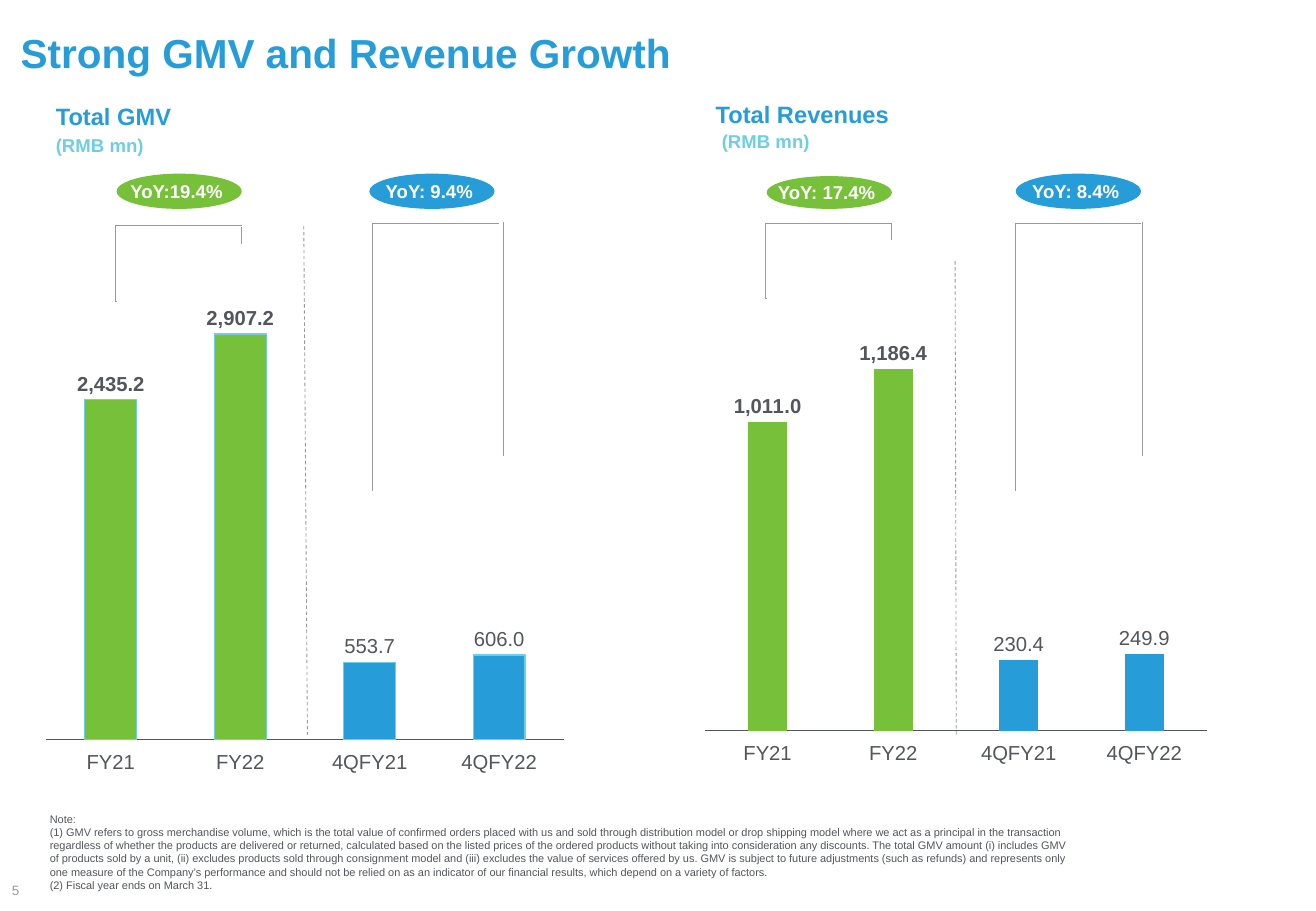
from dataclasses import dataclass

from lxml.etree import SubElement
from pptx import Presentation
from pptx.chart.data import CategoryChartData
from pptx.dml.color import RGBColor
from pptx.enum.chart import XL_CHART_TYPE, XL_LABEL_POSITION, XL_TICK_LABEL_POSITION, XL_TICK_MARK
from pptx.enum.dml import MSO_LINE
from pptx.enum.shapes import MSO_CONNECTOR, MSO_SHAPE
from pptx.enum.text import MSO_ANCHOR, MSO_AUTO_SIZE, PP_ALIGN
from pptx.oxml.ns import qn
from pptx.slide import Slide
from pptx.text.text import TextFrame
from pptx.util import Emu, Pt

PX = 9144  # 100 px to the inch
FONT = "Arial"
COLORS = {
    "blue": "269DD8",
    "green": "76C03A",
    "sky": "6DCEE5",
    "text": "53565A",
    "rule": "97999B",
    "page": "999A9B",
    "white": "FFFFFF",
}
PERIODS = ("FY21", "FY22", "4QFY21", "4QFY22")
NUMBER_FORMAT = "#,##0.0"
NOTES = (
    "Note:",
    "(1) GMV refers to gross merchandise volume, which is the total value of confirmed orders placed "
    "with us and sold through distribution model or drop shipping model where we act as a principal in "
    "the transaction regardless of whether the products are delivered or returned, calculated based on "
    "the listed prices of the ordered products without taking into consideration any discounts. The total "
    "GMV amount (i) includes GMV of products sold by a unit, (ii) excludes products sold through "
    "consignment model and (iii) excludes the value of services offered by us. GMV is subject to future "
    "adjustments (such as refunds) and represents only one measure of the Company’s performance and "
    "should not be relied on as an indicator of our financial results, which depend on a variety of factors.",
    "(2) Fiscal year ends on March 31.",
)


@dataclass(frozen=True)
class Box:
    left: int
    top: int
    width: int
    height: int

    def emu(self) -> tuple[Emu, ...]:
        return tuple(Emu(n * PX) for n in (self.left, self.top, self.width, self.height))


@dataclass(frozen=True)
class Growth:
    """A YoY badge above a bracket that joins two bars."""
    label: str
    color: str
    badge: Box
    start: tuple[int, int]
    corner: tuple[int, int]
    drop: tuple[int, int, int]  # x, top and bottom of the right leg


@dataclass(frozen=True)
class Metric:
    heading: str
    heading_box: Box
    unit_box: Box
    chart_box: Box
    plot: tuple[float, float, float, float]
    values: tuple[float, ...]
    axis_max: int
    gap: int
    overlap: int
    outline: str | None
    divider: tuple[int, int, int, int]
    growths: tuple[Growth, Growth]


METRICS = (
    Metric("Total Revenues", Box(589, 82, 144, 24), Box(594, 107, 73, 19), Box(565, 165, 444, 474),
           (0.034, 0.179, 0.931, 0.742), (1011, 1186.4, 230.4, 249.9), 1400, 219, -27, None,
           (786, 215, 787, 605),
           (Growth("YoY: 17.4% ", "green", Box(631, 145, 103, 27), (631, 246), (734, 184), (734, 184, 198)),
            Growth("YoY: 8.4% ", "blue", Box(836, 143, 103, 29), (836, 404), (939, 184), (940, 183, 375)))),
    Metric("Total GMV", Box(46, 84, 97, 24), Box(46, 110, 73, 19), Box(29, 198, 444, 442),
           (0.02, 0.02, 0.96, 0.91), (2435.2, 2907.2, 553.7, 606), 3500, 150, -25, "sky",
           (250, 186, 253, 605),
           (Growth("YoY:19.4% ", "green", Box(96, 143, 103, 29), (96, 248), (199, 186), (199, 187, 201)),
            Growth("YoY: 9.4% ", "blue", Box(304, 143, 103, 29), (307, 404), (411, 184), (414, 183, 375)))),
)


def rgb(name: str) -> RGBColor:
    return RGBColor.from_string(COLORS[name])


def style_font(font, size: float, color: str, bold: bool = False) -> None:
    font.name, font.size, font.bold = FONT, Pt(size), bold
    font.color.rgb = rgb(color)


def write(frame: TextFrame, *lines: str, size: float, color: str, bold: bool = False,
          align=PP_ALIGN.LEFT, anchor=MSO_ANCHOR.TOP, wrap: bool = True, inset: bool = False) -> None:
    frame.auto_size = MSO_AUTO_SIZE.NONE
    frame.word_wrap = wrap
    frame.vertical_anchor = anchor
    if not inset:
        frame.margin_left = frame.margin_top = frame.margin_right = frame.margin_bottom = 0
    for index, line in enumerate(lines):
        paragraph = frame.paragraphs[0] if index == 0 else frame.add_paragraph()
        paragraph.alignment = align
        run = paragraph.add_run()
        run.text = line
        style_font(run.font, size, color, bold)


def add_text(slide: Slide, box: Box, *lines: str, **text_format) -> None:
    write(slide.shapes.add_textbox(*box.emu()).text_frame, *lines, **text_format)


def add_rule(slide: Slide, *ends: int, dashed: bool = False, elbow: bool = False) -> None:
    kind = MSO_CONNECTOR.ELBOW if elbow else MSO_CONNECTOR.STRAIGHT
    rule = slide.shapes.add_connector(kind, *(Emu(n * PX) for n in ends))
    rule.line.color.rgb = rgb("rule")
    rule.line.width = Pt(0.5)
    if dashed:
        rule.line.dash_style = MSO_LINE.DASH
    properties = rule._element.spPr
    SubElement(properties, qn("a:effectLst"))
    if elbow:  # turn at the very start, so the line rises before it runs right
        geometry = properties.find(qn("a:prstGeom"))
        adjustments = geometry.find(qn("a:avLst"))
        SubElement(adjustments, qn("a:gd"), name="adj1", fmla="val -700")


def set_plot_area(chart, plot: tuple[float, float, float, float]) -> None:
    area = chart._chartSpace.chart.plotArea
    layout = area.find(qn("c:layout"))
    if layout is None:
        layout = area.makeelement(qn("c:layout"), {})
        area.insert(0, layout)
    manual = SubElement(layout, qn("c:manualLayout"))
    settings = [("layoutTarget", "inner"), ("xMode", "edge"), ("yMode", "edge")]
    settings += zip("xywh", map(str, plot))
    for tag, value in settings:
        SubElement(manual, qn(f"c:{tag}"), val=value)


def style_labels(labels, bold: bool) -> None:
    style_font(labels.font, 12, "text", bold)
    labels.position = XL_LABEL_POSITION.OUTSIDE_END


def add_metric_chart(slide: Slide, metric: Metric) -> None:
    data = CategoryChartData(number_format=NUMBER_FORMAT)
    data.categories = PERIODS
    data.add_series("Series 1", metric.values)
    chart = slide.shapes.add_chart(XL_CHART_TYPE.COLUMN_CLUSTERED, *metric.chart_box.emu(), data).chart
    chart.has_legend = chart.has_title = False
    style_font(chart.font, 10, "text")
    set_plot_area(chart, metric.plot)

    value_axis = chart.value_axis
    value_axis.visible = value_axis.has_major_gridlines = False
    value_axis.minimum_scale, value_axis.maximum_scale = 0, metric.axis_max
    period_axis = chart.category_axis
    period_axis.major_tick_mark = XL_TICK_MARK.NONE
    period_axis.tick_label_position = XL_TICK_LABEL_POSITION.LOW
    style_font(period_axis.tick_labels.font, 12, "text")
    period_axis.format.line.color.rgb = rgb("text")
    period_axis.format.line.width = Pt(0.75)

    bars = chart.plots[0]
    bars.vary_by_categories = False
    bars.gap_width, bars.overlap = metric.gap, metric.overlap
    series = bars.series[0]
    labels = series.data_labels
    labels.show_value = True
    labels.number_format, labels.number_format_is_linked = NUMBER_FORMAT, False
    style_labels(labels, bold=False)
    for index in range(len(PERIODS)):
        full_year = index < 2
        point = series.points[index]
        point.format.fill.solid()
        point.format.fill.fore_color.rgb = rgb("green" if full_year else "blue")
        if metric.outline:
            point.format.line.color.rgb = rgb(metric.outline)
            point.format.line.width = Pt(0.75)
        if full_year:
            style_labels(point.data_label, bold=True)


def add_growth(slide: Slide, growth: Growth) -> None:
    badge = slide.shapes.add_shape(MSO_SHAPE.OVAL, *growth.badge.emu())
    badge.shadow.inherit = False
    badge.fill.solid()
    badge.fill.fore_color.rgb = rgb(growth.color)
    badge.line.fill.background()
    write(badge.text_frame, growth.label, size=11, color="white", bold=True, align=PP_ALIGN.CENTER,
          anchor=MSO_ANCHOR.MIDDLE, wrap=False, inset=True)
    add_rule(slide, *growth.start, *growth.corner, elbow=True)
    x, top, bottom = growth.drop
    add_rule(slide, x, top, x, bottom)


def main() -> None:
    deck = Presentation()
    deck.slide_width, deck.slide_height = Emu(1083 * PX), Emu(750 * PX)
    slide = deck.slides.add_slide(deck.slide_layouts[5])
    title = slide.shapes.title
    title.left, title.top, title.width, title.height = Box(17, 22, 1050, 41).emu()
    write(title.text_frame, "Strong GMV and Revenue Growth", size=24, color="blue", bold=True,
          anchor=MSO_ANCHOR.BOTTOM)
    for metric in METRICS:
        add_metric_chart(slide, metric)
        add_text(slide, metric.heading_box, metric.heading, size=14, color="blue", bold=True, wrap=False)
        add_text(slide, metric.unit_box, "(RMB mn)", size=11, color="sky", bold=True, wrap=False)
        add_rule(slide, *metric.divider, dashed=True)
        for growth in metric.growths:
            add_growth(slide, growth)
    add_text(slide, Box(41, 669, 838, 66), *NOTES, size=6.5, color="text")
    add_text(slide, Box(0, 725, 25, 16), "5", size=8, color="page", align=PP_ALIGN.RIGHT,
             anchor=MSO_ANCHOR.MIDDLE, inset=True)
    deck.save("out.pptx")


if __name__ == "__main__":
    main()
